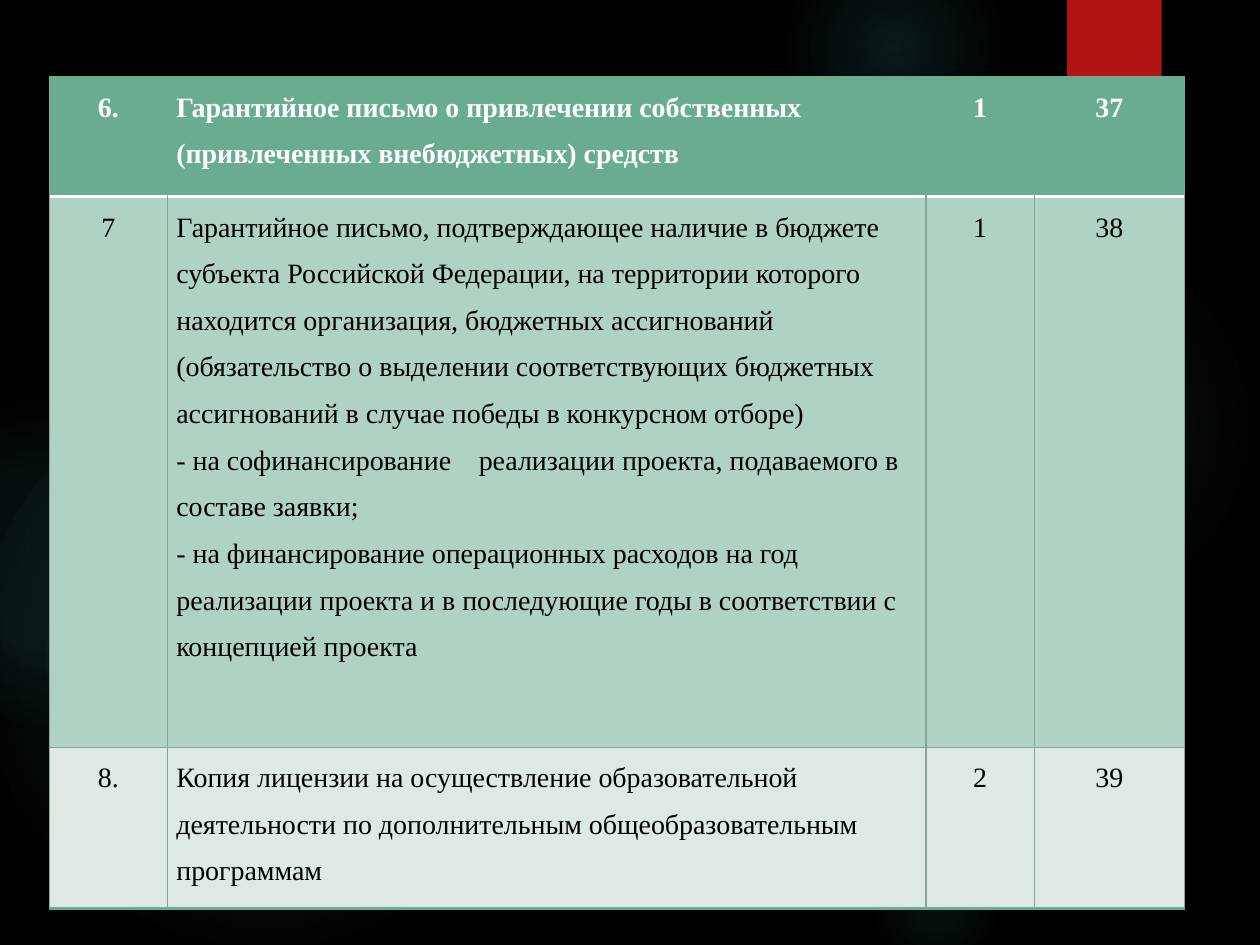
from typing import NamedTuple

from lxml import etree
from pptx import Presentation
from pptx import util as u
from pptx.dml.color import RGBColor
from pptx.enum import shapes, text
from pptx.oxml import parse_xml
from pptx.oxml.ns import nsdecls, qn

HUES = {"back": "000000", "glow": "50B9C1", "flag": "B01513", "head": "6AAC90",
        "mid": "AFD2C3", "pale": "DDE9E2", "grid": "84A697",
        "white": "FFFFFF", "black": "000000"}
FONT = "Times New Roman"


class Glow(NamedTuple):
    left: float
    top: float
    size: float
    stops: tuple  # (position, opacity) in percent


class Row(NamedTuple):
    high: float
    fill: str
    ink: str
    cells: tuple


GLOWS = [
    Glow(6.89, 1.83, 3.08, ((0, 7), (36, 6), (69, 0))),
    Glow(6.22, -0.5, 1.75, ((0, 14), (36, 7), (73, 0))),
    Glow(6.89, 6.67, 1.08, ((0, 9), (36, 5), (66, 0))),
    Glow(-0.17, 2.92, 4.58, ((0, 11), (36, 10), (75, 0))),
    Glow(-0.92, 3.17, 2.58, ((0, 8), (36, 8), (72, 0))),
]
COLS = [0.94, 6.02, 0.86, 1.19]
ROWS = [
    Row(0.95, "head", "white", (
        "6.", "Гарантийное письмо о привлечении собственных "
        "(привлеченных внебюджетных) средств", "1", "37")),
    Row(4.37, "mid", "black", (
        "7", "Гарантийное письмо, подтверждающее наличие в бюджете субъекта "
        "Российской Федерации, на территории которого находится организация, "
        "бюджетных ассигнований (обязательство о выделении соответствующих "
        "бюджетных ассигнований в случае победы в конкурсном отборе)\n"
        "- на софинансирование\tреализации проекта, подаваемого в составе заявки;\n"
        "- на финансирование операционных расходов на год реализации проекта "
        "и в последующие годы в соответствии с концепцией проекта", "1", "38")),
    Row(1.28, "pale", "black", (
        "8.", "Копия лицензии на осуществление образовательной деятельности "
        "по дополнительным общеобразовательным программам", "2", "39")),
]


def hue(name: str) -> RGBColor:
    return RGBColor.from_string(HUES[name])


def add_plain(slide, kind, left: float, top: float, wide: float, high: float):
    shape = slide.shapes.add_shape(kind, *map(u.Inches, (left, top, wide, high)))
    shape.shadow.inherit = False
    shape.line.fill.background()
    return shape


def add_glow(slide, glow: Glow) -> None:
    shape = add_plain(slide, shapes.MSO_SHAPE.OVAL,
                      glow.left, glow.top, glow.size, glow.size)
    stops = "".join(
        f'<a:gs pos="{pos * 1000}"><a:srgbClr val="{HUES["glow"]}">'
        f'<a:alpha val="{alpha * 1000}"/></a:srgbClr></a:gs>'
        for pos, alpha in glow.stops)
    grad = parse_xml(
        f'<a:gradFill {nsdecls("a")}><a:gsLst>{stops}</a:gsLst>'
        '<a:path path="circle"><a:fillToRect l="50000" t="50000" r="50000" '
        'b="50000"/></a:path></a:gradFill>')
    shape.element.spPr.find(qn("a:prstGeom")).addnext(grad)


def set_edge(cell, side: str, name: str, width: float) -> None:
    line = etree.SubElement(cell._tc.get_or_add_tcPr(), qn(f"a:ln{side}"),
                            w=str(u.Pt(width)))
    fill = etree.SubElement(line, qn("a:solidFill"))
    etree.SubElement(fill, qn("a:srgbClr"), val=HUES[name])


def set_tab(para, place: float) -> None:
    tabs = etree.SubElement(para._p.get_or_add_pPr(), qn("a:tabLst"))
    etree.SubElement(tabs, qn("a:tab"), pos=str(u.Inches(place)), algn="l")


def fill_cell(cell, words: str, row: Row, mid: bool) -> None:
    cell.margin_left = cell.margin_right = u.Inches(0.07)
    cell.margin_top = cell.margin_bottom = 0
    cell.fill.solid()
    cell.fill.fore_color.rgb = hue(row.fill)
    cell.text_frame.text = words
    for para in cell.text_frame.paragraphs:
        para.line_spacing = 1.5
        para.alignment = text.PP_ALIGN.CENTER if mid else text.PP_ALIGN.LEFT
        if "\t" in para.text:
            set_tab(para, 2.4)
        for run in para.runs:
            run.font.name = FONT
            run.font.size = u.Pt(16)
            run.font.bold = row.fill == "head"
            run.font.color.rgb = hue(row.ink)


def add_list(slide) -> None:
    high = sum(row.high for row in ROWS)
    table = slide.shapes.add_table(
        len(ROWS), len(COLS), u.Inches(0.39), u.Inches(0.61),
        u.Inches(sum(COLS)), u.Inches(high)).table
    for col, wide in zip(table.columns, COLS):
        col.width = u.Inches(wide)
    for i, row in enumerate(ROWS):
        table.rows[i].height = u.Inches(row.high)
        side = "head" if i == 0 else "grid"
        over = ("head", 0.75) if i == 0 else ("white", 1.5) if i == 1 else ("grid", 0.75)
        under = (("white", 1.5) if i == 0 else
                 ("head", 1.5) if i == len(ROWS) - 1 else ("grid", 0.75))
        for j, words in enumerate(row.cells):
            cell = table.cell(i, j)
            for mark, edge in (("L", (side, 0.75)), ("R", (side, 0.75)),
                               ("T", over), ("B", under)):
                set_edge(cell, mark, *edge)
            fill_cell(cell, words, row, mid=j != 1)


def main() -> None:
    deck = Presentation()
    deck.slide_width, deck.slide_height = u.Inches(10), u.Inches(7.5)
    slide = deck.slides.add_slide(deck.slide_layouts[6])

    # Dark backdrop with soft glows
    slide.background.fill.solid()
    slide.background.fill.fore_color.rgb = hue("back")
    for glow in GLOWS:
        add_glow(slide, glow)

    # Red flag at the top
    flag = add_plain(slide, shapes.MSO_SHAPE.RECTANGLE, 8.47, 0, 0.75, 1.2)
    flag.fill.solid()
    flag.fill.fore_color.rgb = hue("flag")

    # List of documents
    add_list(slide)
    deck.save("out.pptx")


if __name__ == "__main__":
    main()
